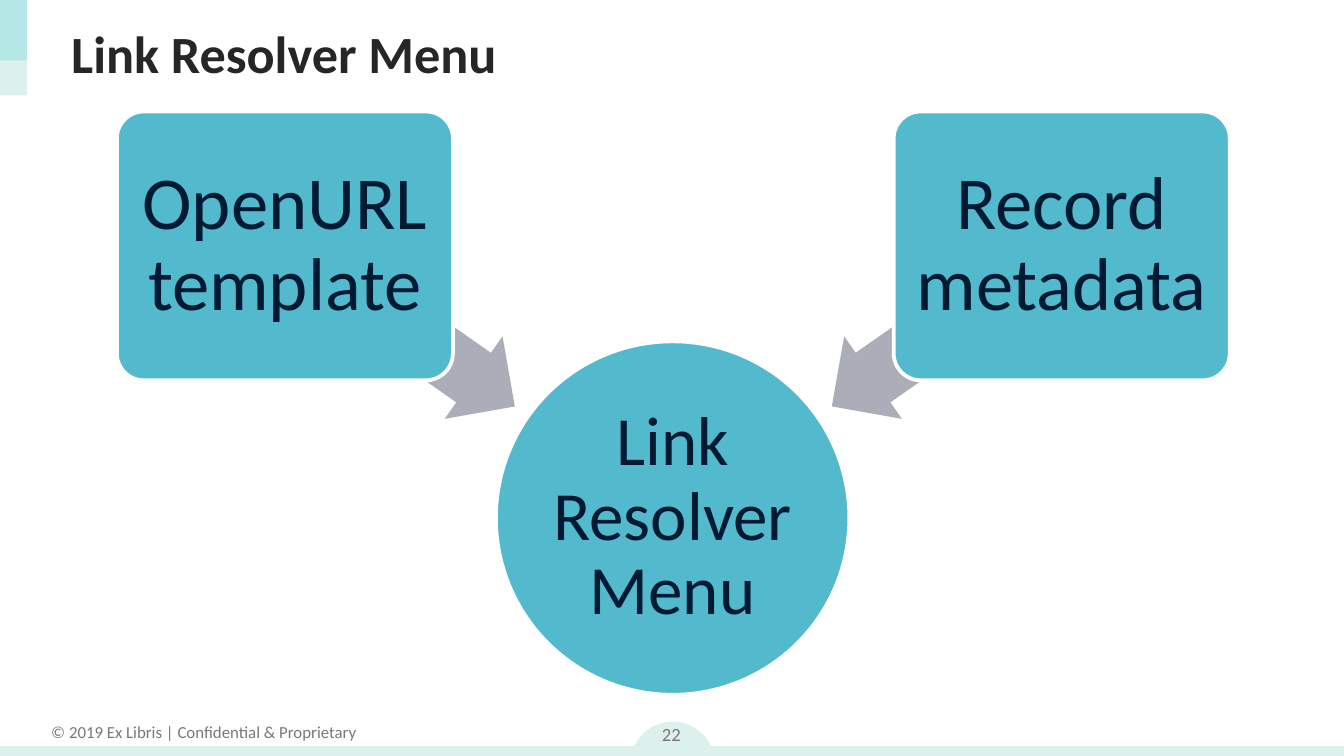
"""Build a slide showing two sources that feed the link resolver menu."""
from dataclasses import dataclass
from typing import Optional

from lxml.etree import SubElement
from pptx import Presentation
from pptx.dml.color import RGBColor
from pptx.enum.shapes import MSO_SHAPE as Preset
from pptx.enum.text import MSO_ANCHOR as Anchor, PP_ALIGN as Align
from pptx.oxml.ns import qn
from pptx.util import Inches, Pt

COLORS = {
    "mint": "DCF1EC",
    "aqua": "50CFDA",
    "teal": "53B9CD",
    "arrow": "ABAEB8",
    "white": "FFFFFF",
    "navy": "001A33",
    "title": "262626",
    "gray": "787878",
}


@dataclass(frozen=True)
class Box:
    left: float
    top: float
    width: float
    height: float

    def lengths(self) -> tuple:
        return tuple(map(Inches, (self.left, self.top, self.width, self.height)))


@dataclass(frozen=True)
class Node:
    text: str
    box: Box
    preset: Preset
    size: int
    inset: float
    corner: Optional[float] = None


@dataclass(frozen=True)
class Arrow:
    box: Box
    rotation: int


def rgb(name: str) -> RGBColor:
    return RGBColor.from_string(COLORS[name])


def write(shape, text: str, *, size: int, color: str, bold: bool = False,
          align=Align.CENTER, anchor=Anchor.MIDDLE, wrap: bool = True,
          inset: Optional[float] = None, line_spacing: float = 1.0) -> None:
    frame = shape.text_frame
    frame.word_wrap = wrap
    frame.vertical_anchor = anchor
    if inset is not None:
        frame.margin_left = frame.margin_right = Inches(inset)
        frame.margin_top = frame.margin_bottom = Inches(inset)
    para = frame.paragraphs[0]
    para.alignment = align
    para.line_spacing = line_spacing
    span = para.add_run()
    span.text = text
    span.font.name = "Calibri"
    span.font.size = Pt(size)
    span.font.bold = bold
    span.font.color.rgb = rgb(color)


def draw_shape(page, preset: Preset, box: Box, fill: str, opacity: int = 100):
    shape = page.shapes.add_shape(preset, *box.lengths())
    shape.shadow.inherit = False
    shape.fill.solid()
    shape.fill.fore_color.rgb = rgb(fill)
    shape.line.fill.background()
    if opacity < 100:
        color = shape.element.spPr.find(qn("a:solidFill"))[0]
        SubElement(color, qn("a:alpha")).set("val", str(opacity * 1000))
    return shape


def draw_node(page, node: Node) -> None:
    shape = draw_shape(page, node.preset, node.box, "teal")
    shape.line.color.rgb = rgb("white")
    shape.line.width = Pt(2)
    if node.corner is not None:
        shape.adjustments[0] = node.corner
    write(shape, node.text, size=node.size, color="navy", inset=node.inset,
          line_spacing=0.9)


def draw_arrow(page, arrow: Arrow) -> None:
    shape = draw_shape(page, Preset.LEFT_ARROW, arrow.box, "arrow")
    shape.adjustments[0] = 0.6
    shape.adjustments[1] = 0.5
    shape.rotation = arrow.rotation


def draw_frame(page) -> None:
    draw_shape(page, Preset.OVAL, Box(4.69, 5.37, 0.63, 0.63), "mint")
    footer = page.shapes.add_textbox(*Box(0.27, 5.32, 2.49, 0.25).lengths())
    write(footer, "© 2019 Ex Libris | Confidential & Proprietary", size=9,
          color="gray", anchor=Anchor.TOP, wrap=False)
    draw_shape(page, Preset.RECTANGLE, Box(0, 5.55, 10, 0.11), "mint")
    draw_shape(page, Preset.RECTANGLE, Box(0, 0, 0.2, 0.71), "mint")
    draw_shape(page, Preset.RECTANGLE, Box(0, 0, 0.2, 0.45), "aqua", opacity=27)
    number = page.shapes.add_textbox(*Box(4.7, 5.26, 0.59, 0.4).lengths())
    write(number, "22", size=10, color="gray")


def main() -> None:
    deck = Presentation()
    deck.slide_width = Inches(10)
    deck.slide_height = deck.slide_width * 9 // 16
    page = deck.slides.add_slide(deck.slide_layouts[5])
    draw_frame(page)

    title = page.shapes.title
    title.left, title.top, title.width, title.height = Box(0.43, 0.08, 9.21, 0.63).lengths()
    write(title, "Link Resolver Menu", size=28, color="title", bold=True, align=Align.LEFT)

    draw_node(page, Node("Link Resolver Menu", Box(3.69, 2.54, 2.63, 2.63),
                         Preset.OVAL, 37, 0.03))
    sources = (
        ("OpenURL template", 0.87, Arrow(Box(1.93, 2.05, 2.09, 0.75), 215)),
        ("Record metadata", 6.65, Arrow(Box(6, 2.05, 2.09, 0.75), 325)),
    )
    for text, left, arrow in sources:
        draw_arrow(page, arrow)
        draw_node(page, Node(text, Box(left, 0.83, 2.5, 2),
                             Preset.ROUNDED_RECTANGLE, 40, 0.08, corner=0.1))
    deck.save("out.pptx")


if __name__ == "__main__":
    main()
